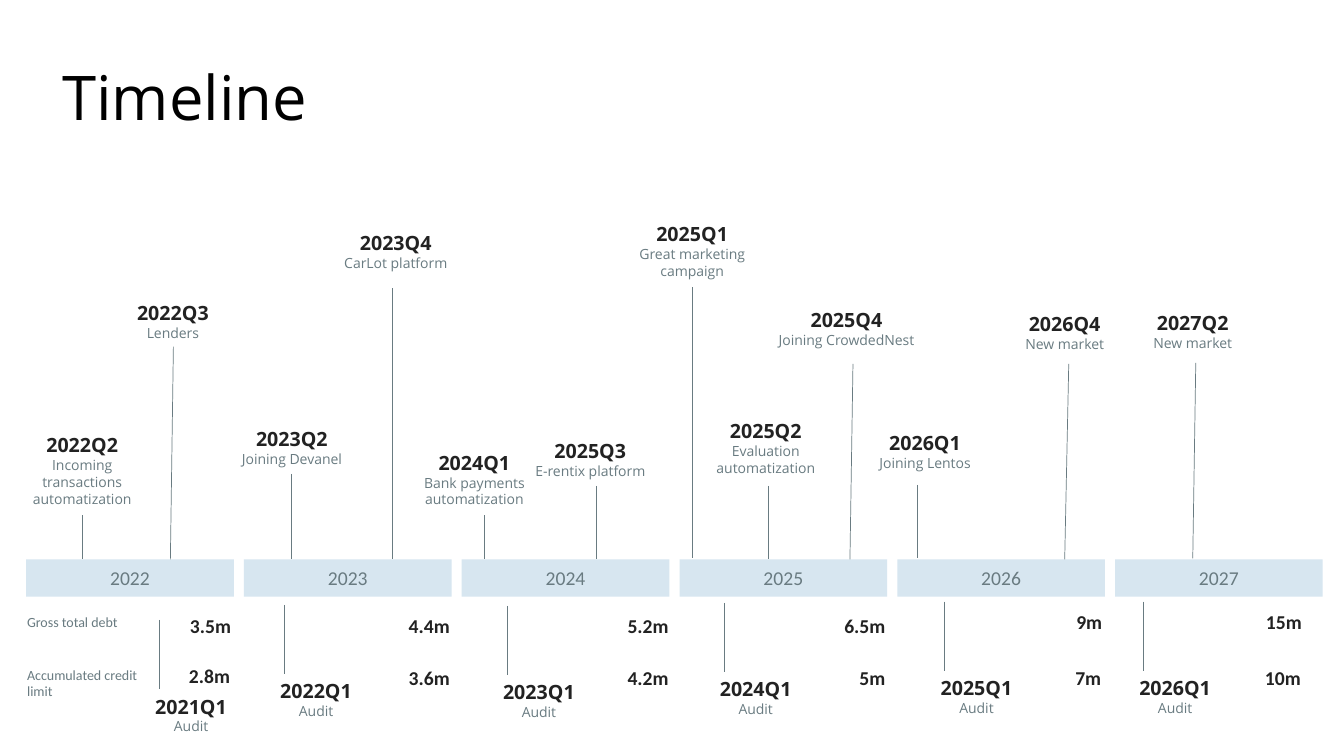
"""Build the company timeline slide, 2022 to 2027."""
from pptx import Presentation, util as u
from pptx.dml.color import RGBColor
from pptx.enum import shapes, text
from pptx.oxml import xmlchemy as xml

PX = 9144
BAR = RGBColor(0xD7, 0xE6, 0xF0)
GREY = RGBColor(0x69, 0x7B, 0x81)
DARK = RGBColor(0x22, 0x22, 0x22)
BLACK = RGBColor(0, 0, 0)
OPEN, CAL = "Open Sans", "Calibri"
LEFT, MID, RIGHT = text.PP_ALIGN.LEFT, text.PP_ALIGN.CENTER, text.PP_ALIGN.RIGHT

deck = Presentation()
deck.slide_width, deck.slide_height = u.Inches(13.33), u.Inches(7.5)
slide = deck.slides.add_slide(deck.slide_layouts[6])


def write(box, align, *lines):
    frame = box.text_frame
    frame.word_wrap = True
    for i, (words, size, face, color, bold) in enumerate(lines):
        para = frame.paragraphs[0] if i == 0 else frame.add_paragraph()
        para.alignment = align
        run = para.add_run()
        run.text = words
        font = run.font
        font.size, font.name, font.bold = u.Pt(size), face, bold
        font.color.rgb = color


def label(x, y, w, h, align, *lines):
    box = slide.shapes.add_textbox(x * PX, y * PX, w * PX, h * PX)
    write(box, align, *lines)


label(52, 54, 711, 84, LEFT, ("Timeline", 44, OPEN, BLACK, False))

for i in range(6):
    bar = slide.shapes.add_shape(shapes.MSO_SHAPE.RECTANGLE, (26 + 216 * i) * PX,
                                 555 * PX, 206 * PX, 37 * PX)
    bar.shadow.inherit = False
    bar.fill.solid()
    bar.fill.fore_color.rgb = BAR
    bar.line.fill.background()
    bar.text_frame.vertical_anchor = text.MSO_ANCHOR.MIDDLE
    write(bar, MID, (str(2022 + i), 14, CAL, GREY, False))

events = [
    (14, 425, 135, 84, "2022Q2", "Incoming transactions automatization"),
    (104, 294, 135, 50, "2022Q3", "Lenders"),
    (222, 419, 135, 50, "2023Q2", "Joining Devanel"),
    (325, 224, 135, 50, "2023Q4", "CarLot platform"),
    (403, 442, 135, 67, "2024Q1", "Bank payments automatization"),
    (518, 431, 135, 50, "2025Q3", "E-rentix platform"),
    (619, 215, 135, 67, "2025Q1", "Great marketing campaign"),
    (692, 411, 135, 67, "2025Q2", "Evaluation automatization"),
    (760, 301, 159, 50, "2025Q4", "Joining CrowdedNest"),
    (850, 423, 135, 50, "2026Q1", "Joining Lentos"),
    (983, 305, 146, 50, "2026Q4", "New market"),
    (1110, 304, 146, 50, "2027Q2", "New market"),
]
stems = [
    (82, 511, 82, 555), (172, 344, 169, 555), (289, 470, 289, 555),
    (389, 286, 389, 555), (480, 511, 480, 555), (592, 482, 592, 555),
    (687, 285, 687, 554), (762, 482, 762, 555), (846, 361, 843, 555),
    (910, 481, 910, 554), (1060, 361, 1056, 555), (1186, 360, 1183, 554),
]
audits = [(122, 684), (246, 669), (467, 670), (682, 667), (901, 666), (1098, 666)]
for i, (x, y) in enumerate(audits):
    events.append((x, y, 135, 50, f"{2021 + i}Q1", "Audit"))
    stems.append((x + 36, y - 69, x + 36, y))

for x, y, w, h, date, note in events:
    label(x, y, w, h, MID, (date, 14, OPEN, DARK, True), (note, 10, OPEN, GREY, False))

for ends in stems:
    stem = slide.shapes.add_connector(shapes.MSO_CONNECTOR.STRAIGHT, *(n * PX for n in ends))
    stem.line.color.rgb = GREY
    stem.line.width = u.Pt(0.5)
    stem.element.spPr.append(xml.OxmlElement("a:effectLst"))

for y, h, name in [(604, 27, "Gross total debt"), (656, 44, "Accumulated credit limit")]:
    label(17, y, 135, h, LEFT, (name, 10, CAL, GREY, False))

sums = [
    (104, 604, "3.5m"), (321, 604, "4.4m"), (538, 604, "5.2m"),
    (753, 604, "6.5m"), (968, 600, "9m"), (1166, 600, "15m"),
    (103, 654, "2.8m"), (321, 656, "3.6m"), (538, 656, "4.2m"),
    (753, 656, "5m"), (967, 656, "7m"), (1165, 656, "10m"),
]
for x, y, value in sums:
    label(x, y, 135, 34, RIGHT, (value, 14, CAL, DARK, True))

deck.save("out.pptx")
